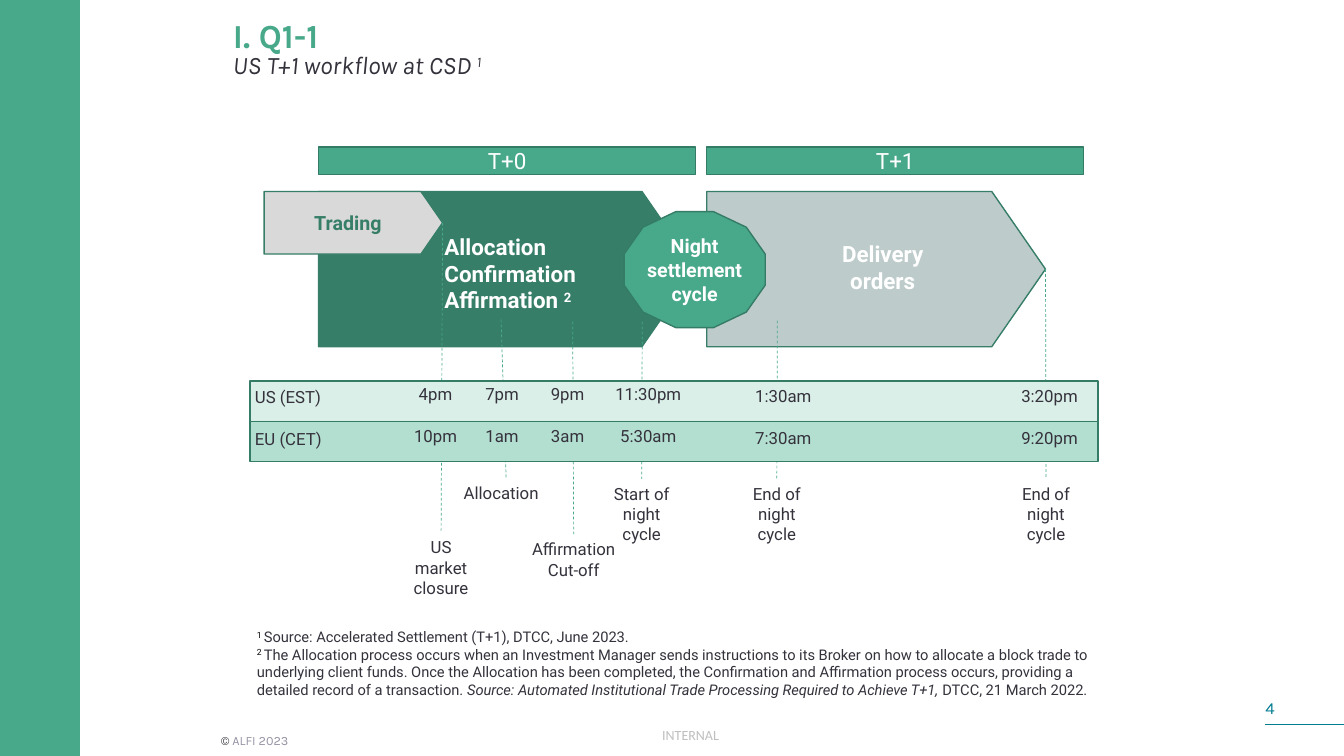
from dataclasses import dataclass
from typing import NamedTuple, Optional

from lxml.etree import SubElement
from pptx import Presentation
from pptx.dml.color import RGBColor
from pptx.enum.dml import MSO_LINE
from pptx.enum.shapes import MSO_CONNECTOR, MSO_SHAPE
from pptx.enum.text import MSO_ANCHOR as ANCHOR, PP_ALIGN as ALIGN
from pptx.oxml.ns import qn
from pptx.util import Inches, Pt


@dataclass(frozen=True)
class Theme:
    green: str = "48A88A"
    deep_green: str = "367E68"
    outline: str = "357C66"
    us_band: str = "D9EFE8"
    eu_band: str = "B3DFD1"
    light_grey: str = "D9D9D9"
    blue_grey: str = "BECBCB"
    ink: str = "35323C"
    black: str = "000000"
    white: str = "FFFFFF"
    teal: str = "007C92"
    copyright: str = "9792A4"
    marking: str = "BFBFBF"
    body_font: str = "Roboto"
    title_font: str = "Karla"
    marking_font: str = "Calibri"
    title: float = 24
    subtitle: float = 18
    large: float = 16
    medium: float = 14
    body: float = 12
    note: float = 10.5
    small: float = 10
    tiny: float = 9


T = Theme()


class Box(NamedTuple):
    left: float
    top: float
    width: float
    height: float

    def lengths(self):
        return [Inches(v) for v in self]


class Style(NamedTuple):
    size: float = T.body
    color: str = T.ink
    font: str = T.body_font
    bold: bool = False
    italic: bool = False
    raised: bool = False


class Span(NamedTuple):
    text: str
    style: Style = Style()


class Block(NamedTuple):
    box: Box
    fill: str
    line: str
    kind: MSO_SHAPE = MSO_SHAPE.RECTANGLE
    text: str = ""
    style: Style = Style()


class Milestone(NamedTuple):
    us: str
    eu: str
    time_x: float
    time_top: float
    label: str
    label_box: Box
    start: Optional[tuple] = None
    tip_of: str = ""
    align: ALIGN = ALIGN.CENTER


BOLD_16 = Style(T.large, T.white, bold=True)
BOLD_14 = Style(T.medium, T.white, bold=True)
DAY = Style(T.large, T.white)
NOTE = Style(T.note)
NOTE_MARK = Style(T.note, T.black, raised=True)
SUBTITLE = Style(T.subtitle, font=T.title_font, italic=True)
PENTAGON = MSO_SHAPE.PENTAGON
INSET = (0.1, 0.05)

SIDEBAR = Block(Box(0, 0, 0.79, 7.5), T.green, T.green)
STAGES = {
    "allocation": Block(Box(3.16, 1.9, 3.74, 1.54), T.deep_green, T.deep_green, PENTAGON),
    "t0": Block(Box(3.16, 1.46, 3.74, 0.27), T.green, T.outline, text="T+0", style=DAY),
    "t1": Block(Box(7.01, 1.46, 3.74, 0.27), T.green, T.outline, text="T+1", style=DAY),
    "trading": Block(Box(2.62, 1.9, 1.77, 0.62), T.light_grey, T.deep_green, PENTAGON,
                     "Trading", BOLD_14._replace(color=T.deep_green)),
    "delivery": Block(Box(7.01, 1.9, 3.36, 1.54), T.blue_grey, T.deep_green, PENTAGON),
    "night": Block(Box(6.19, 2.1, 1.4, 1.15), T.green, T.outline, MSO_SHAPE.DODECAGON,
                   "Night settlement cycle", BOLD_14),
}
BAND_TOP, BAND_HEIGHT, ROW_STEP = 3.78, 0.4, 0.41
BANDS = [("US (EST)", T.us_band), ("EU (CET)", T.eu_band)]
MILESTONES = [
    Milestone("4pm", "10pm", 4.32, 3.76, "US market closure", Box(3.91, 5.28, 0.93, 0.71),
              tip_of="trading"),
    Milestone("7pm", "1am", 4.98, 3.76, "Allocation", Box(4.5, 4.74, 1.04, 0.3),
              (4.97, 3.17), align=ALIGN.LEFT),
    Milestone("9pm", "3am", 5.63, 3.76, "Affirmation Cut-off", Box(5.17, 5.3, 1.04, 0.5),
              (5.68, 3.19)),
    Milestone("11:30pm", "5:30am", 6.43, 3.76, "Start of night cycle",
              Box(5.9, 4.75, 0.93, 0.71), (6.37, 3.19)),
    Milestone("1:30am", "7:30am", 7.77, 3.78, "End of night cycle",
              Box(7.24, 4.75, 0.93, 0.71), (7.71, 3.18)),
    Milestone("3:20pm", "9:20pm", 10.41, 3.78, "End of night cycle",
              Box(9.91, 4.75, 0.93, 0.71), tip_of="delivery"),
]


def rgb(color: str) -> RGBColor:
    return RGBColor.from_string(color)


def write(tf, lines, align=ALIGN.LEFT, anchor=ANCHOR.TOP, inset=INSET, spacing=None) -> None:
    """Fill a text frame; each line is a list of spans."""
    tf.word_wrap = True
    tf.vertical_anchor = anchor
    tf.margin_left = tf.margin_right = Inches(inset[0])
    tf.margin_top = tf.margin_bottom = Inches(inset[1])
    for i, spans in enumerate(lines):
        p = tf.paragraphs[0] if i == 0 else tf.add_paragraph()
        p.alignment = align
        if spacing:
            p.line_spacing = spacing
        for span in spans:
            r = p.add_run()
            r.text = span.text
            style = span.style
            r.font.size, r.font.name = Pt(style.size), style.font
            r.font.bold, r.font.italic = style.bold, style.italic
            r.font.color.rgb = rgb(style.color)
            if style.raised:
                r.font._element.set("baseline", "30000")


def add_text(s, box: Box, lines, **layout):
    tb = s.shapes.add_textbox(*box.lengths())
    write(tb.text_frame, lines, **layout)
    return tb


def add_block(s, block: Block):
    sp = s.shapes.add_shape(block.kind, *block.box.lengths())
    sp.shadow.inherit = False
    sp.fill.solid()
    sp.fill.fore_color.rgb = rgb(block.fill)
    sp.line.color.rgb = rgb(block.line)
    sp.line.width = Pt(1)
    if block.kind == PENTAGON:
        sp.adjustments[0] = 0.346
    if block.text:
        write(sp.text_frame, [[Span(block.text, block.style)]],
              ALIGN.CENTER, ANCHOR.MIDDLE, (0, 0))
    return sp


def add_line(s, start, end, color: str):
    line = s.shapes.add_connector(MSO_CONNECTOR.STRAIGHT, *map(Inches, (*start, *end)))
    line.line.color.rgb = rgb(color)
    line.line.width = Pt(0.5)
    SubElement(line._element.spPr, qn("a:effectLst"))
    return line


def add_milestone(s, m: Milestone, stages) -> None:
    """Draw the event label and the dashed line that drops to it."""
    label = add_text(s, m.label_box, [[Span(m.label)]], align=m.align)
    line = add_line(s, m.start or (0, 0), m.label_box[:2], T.green)
    line.line.dash_style = MSO_LINE.DASH
    if m.tip_of:
        line.begin_connect(stages[m.tip_of], 3)
    line.end_connect(label, 0)


def add_timetable(s) -> None:
    for row, (zone, fill) in enumerate(BANDS):
        top = BAND_TOP + row * BAND_HEIGHT
        add_block(s, Block(Box(2.48, top, 8.41, BAND_HEIGHT), fill, T.outline))
    for row, (zone, fill) in enumerate(BANDS):
        shift = row * ROW_STEP
        add_text(s, Box(2.43, 3.79 + shift, 1.09, 0.3), [[Span(zone)]])
        for m in MILESTONES:
            add_text(s, Box(m.time_x - 0.4, m.time_top + shift, 0.8, 0.3),
                     [[Span((m.us, m.eu)[row])]], align=ALIGN.CENTER, inset=(0, 0.05))


def add_footer(s) -> None:
    add_text(s, Box(2.45, 6.18, 8.58, 0.81), [
        [Span("1 ", NOTE_MARK),
         Span("Source: Accelerated Settlement (T+1), DTCC, June 2023.", NOTE)],
        [Span("2 ", NOTE_MARK),
         Span("The Allocation process occurs when an Investment Manager sends instructions to "
              "its Broker on how to allocate a block trade to underlying client funds. Once the "
              "Allocation has been completed, the Confirmation and Affirmation process occurs, "
              "providing a detailed record of a transaction. ", NOTE),
         Span("Source: Automated Institutional Trade Processing Required to Achieve T+1, ",
              NOTE._replace(italic=True)),
         Span("DTCC, 21 March 2022.", NOTE)]])
    add_text(s, Box(2.19, 7.21, 3.05, 0.27),
             [[Span("© ", Style(T.tiny, font=T.title_font)),
               Span("ALFI 2023", Style(T.tiny, T.copyright, T.title_font))]],
             anchor=ANCHOR.MIDDLE, inset=(0, 0.05))
    add_text(s, Box(6.47, 7.16, 0.77, 0.27),
             [[Span("INTERNAL", Style(T.small, T.marking, T.marking_font))]])
    add_text(s, Box(12.55, 6.92, 0.18, 0.2), [[Span("4", Style(T.body, T.teal, T.title_font))]],
             anchor=ANCHOR.MIDDLE, inset=(0, 0))
    add_line(s, (12.55, 7.19), (13.33, 7.19), T.teal)


def main() -> None:
    prs = Presentation()
    prs.slide_width, prs.slide_height = Inches(13.33), Inches(7.5)
    s = prs.slides.add_slide(prs.slide_layouts[5])
    title = s.shapes.title
    title.left, title.top, title.width, title.height = Box(2.31, 0.25, 8.41, 0.54).lengths()
    write(title.text_frame, [
        [Span("I. Q1-1", Style(T.title, T.green, T.title_font, bold=True))],
        [Span("US T+1 workflow at CSD ", SUBTITLE), Span("1", SUBTITLE._replace(raised=True))],
    ], anchor=ANCHOR.BOTTOM, inset=(0, 0), spacing=0.8)
    add_block(s, SIDEBAR)
    stages = {name: add_block(s, block) for name, block in STAGES.items()}
    add_text(s, Box(4.31, 2.26, 1.63, 0.91), [
        [Span("Allocation", BOLD_16)], [Span("Confirmation", BOLD_16)],
        [Span("Affirmation ", BOLD_16), Span("2", BOLD_16._replace(raised=True))]])
    add_text(s, Box(8.04, 2.33, 1.43, 0.64), [[Span("Delivery orders", BOLD_16)]],
             align=ALIGN.CENTER)
    for m in MILESTONES:
        add_milestone(s, m, stages)
    add_timetable(s)
    add_footer(s)
    prs.save("out.pptx")


if __name__ == "__main__":
    main()
